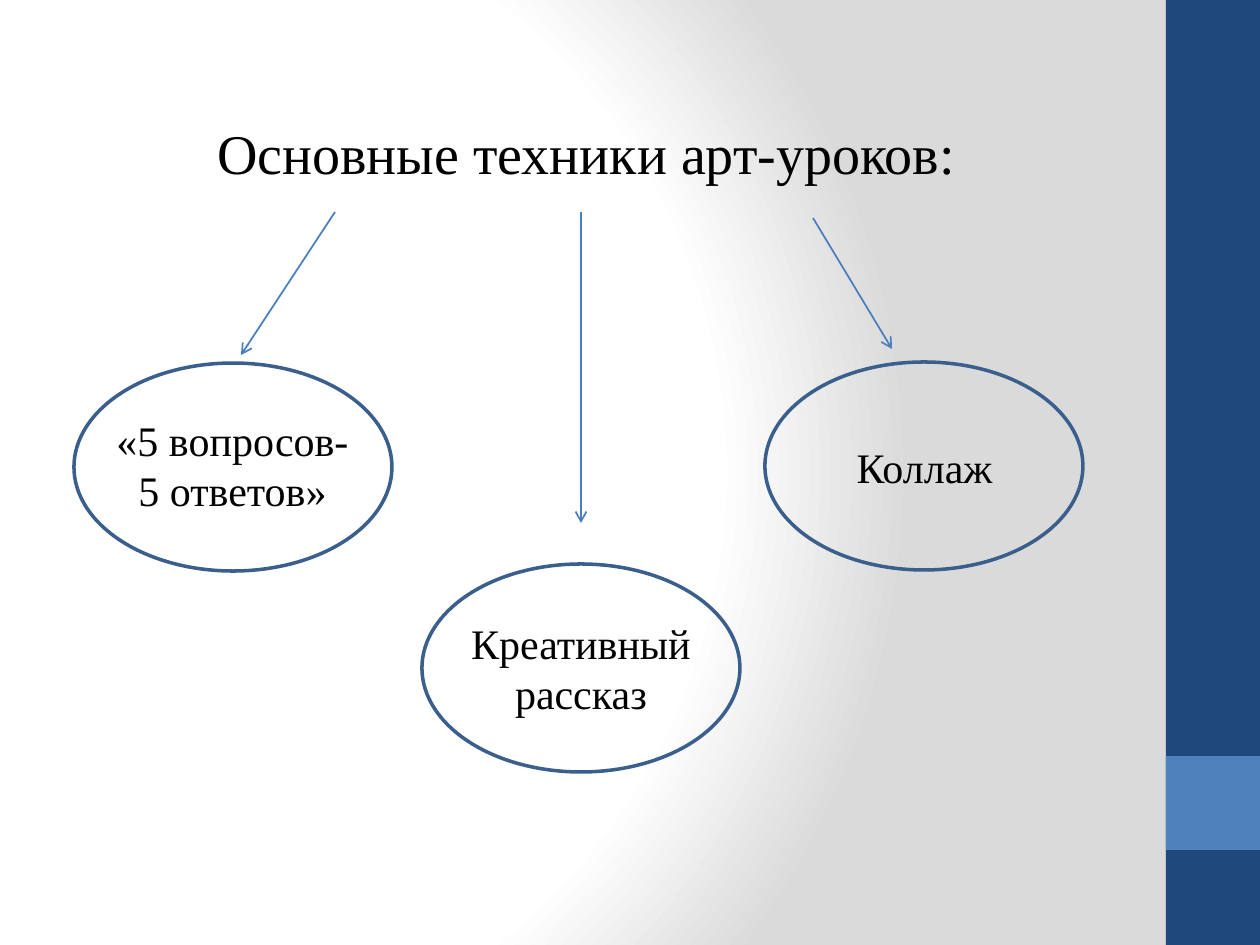
from dataclasses import dataclass

from lxml.etree import SubElement
from pptx import Presentation
from pptx.dml.color import RGBColor
from pptx.enum.shapes import MSO_CONNECTOR, MSO_SHAPE
from pptx.enum.text import MSO_AUTO_SIZE, PP_ALIGN
from pptx.oxml import parse_xml
from pptx.oxml.ns import nsdecls, qn
from pptx.util import Pt

EMU_PER_PX = 914400 / 126


@dataclass(frozen=True)
class Theme:
    font: str = "Times New Roman"
    title_size: int = 32
    label_size: int = 24
    text: str = "000000"
    dark_band: str = "1F497D"
    light_band: str = "4F81BD"
    outline: str = "3A5F8C"
    arrow: str = "4B7EBC"
    background: tuple = ((0, "FFFFFF"), (75, "FFFFFF"), (100, "DADADA"))


THEME = Theme()


def px(value):
    return round(value * EMU_PER_PX)


def color(value):
    return RGBColor.from_string(value)


def apply_format(target, values):
    for name, value in values.items():
        setattr(target, name, value)


def set_background(slide):
    slide.background.fill.gradient()
    gradient = slide.element.find(".//" + qn("a:gradFill"))
    stops = "".join(
        f'<a:gs pos="{position * 1000}"><a:srgbClr val="{value}"/></a:gs>'
        for position, value in THEME.background
    )
    gradient.getparent().replace(gradient, parse_xml(
        f'<a:gradFill {nsdecls("a")} rotWithShape="1"><a:gsLst>{stops}</a:gsLst>'
        '<a:path path="circle"><a:fillToRect l="20000" t="50000" r="100000" b="50000"/>'
        '</a:path></a:gradFill>'
    ))


def add_band(slide, box, fill):
    shape = slide.shapes.add_shape(MSO_SHAPE.RECTANGLE, *map(px, box))
    shape.shadow.inherit = False
    shape.fill.solid()
    shape.fill.fore_color.rgb = color(fill)
    shape.line.fill.background()


def add_ellipse(slide, box):
    shape = slide.shapes.add_shape(MSO_SHAPE.OVAL, *map(px, box))
    shape.shadow.inherit = False
    shape.fill.background()
    shape.line.color.rgb = color(THEME.outline)
    shape.line.width = Pt(2)


def add_text(slide, box, text, size, wrap=True, fit=MSO_AUTO_SIZE.SHAPE_TO_FIT_TEXT):
    frame = slide.shapes.add_textbox(*map(px, box)).text_frame
    apply_format(frame, {"word_wrap": wrap, "auto_size": fit})
    paragraph = frame.paragraphs[0]
    paragraph.alignment = PP_ALIGN.CENTER
    run = paragraph.add_run()
    run.text = text
    apply_format(run.font, {"name": THEME.font, "size": Pt(size)})
    run.font.color.rgb = color(THEME.text)
    return paragraph


def add_title(slide, box, text):
    paragraph = add_text(slide, box, text, THEME.title_size, fit=MSO_AUTO_SIZE.NONE)
    paragraph.space_before = Pt(4)
    paragraph._p.get_or_add_pPr().set("marL", str(px(15)))


def add_arrow(slide, start, end):
    connector = slide.shapes.add_connector(
        MSO_CONNECTOR.STRAIGHT, *map(px, start + end))
    connector.line.color.rgb = color(THEME.arrow)
    connector.line.width = Pt(1)
    SubElement(connector.line._get_or_add_ln(), qn("a:tailEnd"), type="arrow")
    SubElement(connector._element.spPr, qn("a:effectLst"))


def main():
    presentation = Presentation()
    apply_format(presentation, {"slide_width": px(1260), "slide_height": px(945)})
    slide = presentation.slides.add_slide(presentation.slide_layouts[6])
    set_background(slide)
    add_band(slide, (1166, 0, 94, 945), THEME.dark_band)
    add_band(slide, (1166, 756, 94, 94), THEME.light_band)
    add_title(slide, (54, 112, 1050, 662), "Основные техники арт-уроков:")

    for left, top in ((74, 363), (422, 564), (765, 362)):
        add_ellipse(slide, (left, top, 318, 208))

    labels = (
        ((89, 408, 287, 115), "«5 вопросов- 5 ответов»", True),
        ((431, 611, 300, 115), "Креативный рассказ", True),
        ((843, 435, 163, 63), "Коллаж", False),
    )
    for box, text, wrap in labels:
        add_text(slide, box, text, THEME.label_size, wrap)

    arrows = (
        ((335, 212), (241, 355)),
        ((813, 218), (892, 349)),
        ((581, 212), (581, 523)),
    )
    for start, end in arrows:
        add_arrow(slide, start, end)
    presentation.save("out.pptx")


if __name__ == "__main__":
    main()
